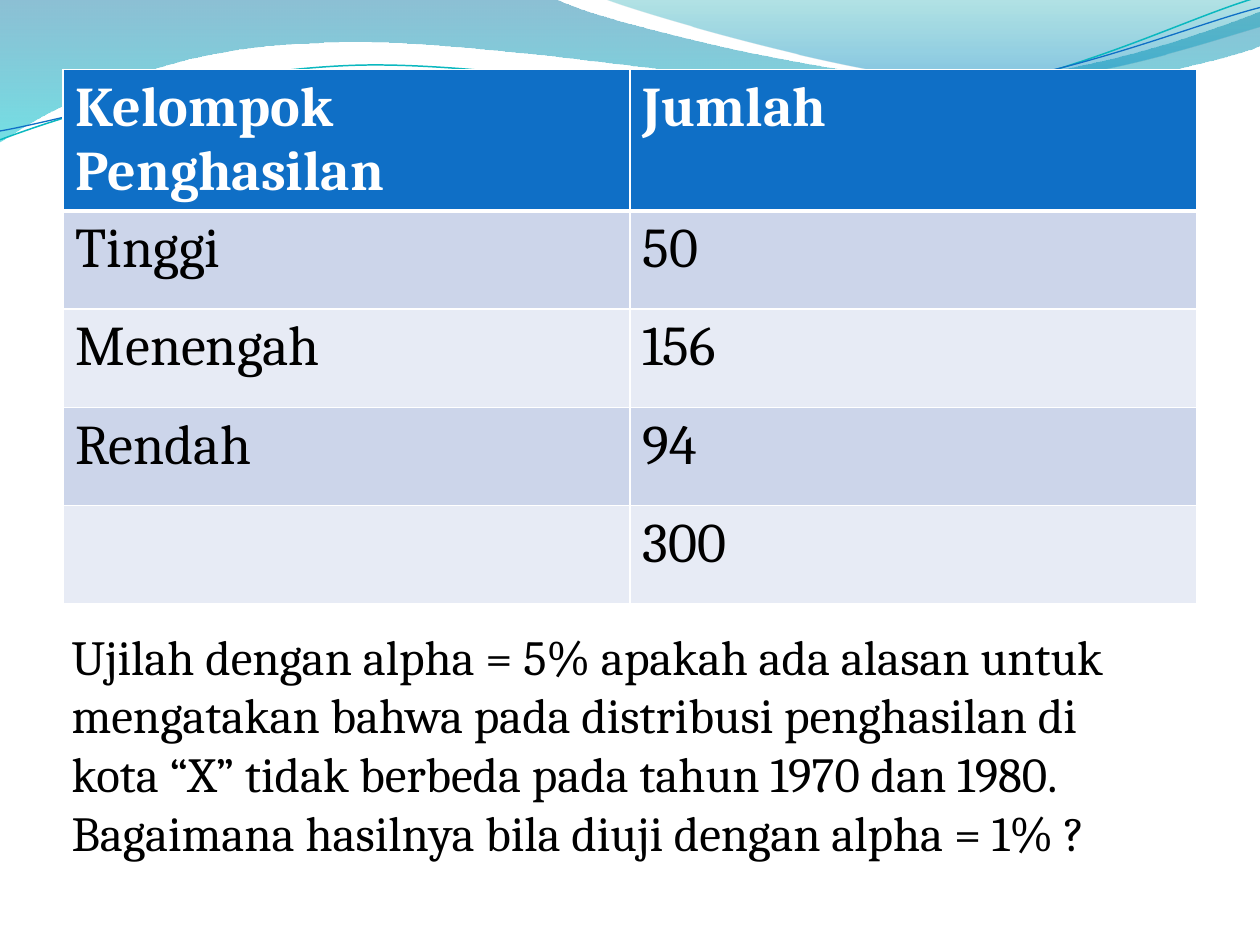
from math import cos, radians, sin

from lxml import etree
from pptx import Presentation
from pptx.dml.color import RGBColor
from pptx.enum.text import MSO_AUTO_SIZE
from pptx.oxml.ns import qn
from pptx.util import Inches, Pt

WHITE = RGBColor(0xFF, 0xFF, 0xFF)
BLACK = RGBColor(0, 0, 0)
BLUE = RGBColor(0x0F, 0x6F, 0xC6)
TEAL = RGBColor(0x0A, 0xB8, 0xBF)
BANDS = RGBColor(0xCC, 0xD5, 0xEA), RGBColor(0xE7, 0xEB, 0xF5)
FIT = MSO_AUTO_SIZE.SHAPE_TO_FIT_TEXT
FONT = "Cambria"
TILT = 2.7

BROAD = [
    [(0, 0)], [(4.4, -0.01)],
    [(4.76, 0.17), (6.64, 0.63), (7.58, 0.63)],
    [(8.53, 0.63), (9.58, 0.26), (10, 0.09)],
    [(10.01, 0.36)],
    [(9.83, 0.44), (8.7, 0.76), (7.46, 0.75)],
    [(6.22, 0.75), (3.82, 0.28), (2.57, 0.34)],
    [(1.29, 0.36), (0.46, 0.83), (-0.01, 1.13)],
    [(0, 0)],
]
CREST = [
    [(4.79, -0.01)],
    [(5.09, 0.11), (6.82, 0.62), (7.69, 0.65)],
    [(8.56, 0.69), (9.61, 0.32), (10, 0.21)],
    [(10, 0)], [(4.79, -0.01)],
]
UPPER = [
    [(0, 1.11)],
    [(0.48, 0.93), (1.58, 0.57), (2.77, 0.52)],
    [(3.95, 0.47), (5.93, 0.89), (7.13, 0.8)],
    [(8.33, 0.71), (9.38, 0.15), (9.98, -0.02)],
]
LOWER = [
    [(0, 1.04)],
    [(0.47, 0.96), (1.64, 0.61), (2.83, 0.56)],
    [(4.03, 0.51), (5.97, 0.84), (7.17, 0.75)],
    [(8.36, 0.67), (9.41, 0.21), (10, 0.06)],
]
ROWS = [
    ("Kelompok Penghasilan", "Jumlah"),
    ("Tinggi", "50"),
    ("Menengah", "156"),
    ("Rendah", "94"),
    ("", "300"),
]
TASK = [
    "Ujilah dengan alpha = 5% apakah ada alasan untuk mengatakan bahwa pada "
    "distribusi penghasilan di kota “X” tidak berbeda pada tahun 1970 dan 1980.",
    "Bagaimana hasilnya bila diuji dengan alpha = 1% ?",
]


def turn(path, mid):
    """Turn a path clockwise by the tilt about a middle point."""
    c, s = cos(radians(TILT)), sin(radians(TILT))
    cx, cy = mid
    return [
        [(cx + (x - cx) * c - (y - cy) * s, cy + (x - cx) * s + (y - cy) * c) for x, y in part]
        for part in path
    ]


class Deck:
    """Hold the style and the current slide."""

    def __init__(self, slide):
        self.slide = slide

    def outline(self, path, close):
        """Add an outline of lines and cubic curves."""
        ends = [(Inches(x), Inches(y)) for x, y in (part[-1] for part in path)]
        pen = self.slide.shapes.build_freeform(*ends[0])
        pen.add_line_segments(ends[1:], close=close)
        shape = pen.convert_to_shape()
        shape.shadow.inherit = False
        lines = list(shape.element.spPr.iter(qn("a:lnTo")))
        for line, part in zip(lines, path[1:]):
            if len(part) == 3:
                bend = etree.Element(qn("a:cubicBezTo"))
                for x, y in part:
                    left, top = Inches(x) - shape.left, Inches(y) - shape.top
                    etree.SubElement(bend, qn("a:pt"), x=str(left), y=str(top))
                line.getparent().replace(line, bend)
        return shape

    def wave(self, path, stops):
        """Add a wave with a see-through gradient running down."""
        shape = self.outline(path, True)
        shape.line.fill.background()
        shape.fill.gradient()
        shape.fill.gradient_angle = 270
        for stop, (place, color, _) in zip(shape.fill.gradient_stops, stops):
            stop.position = place
            stop.color.rgb = RGBColor.from_string(color)
        for node, (_, _, alpha) in zip(shape.element.spPr.iter(qn("a:srgbClr")), stops):
            etree.SubElement(node, qn("a:alpha"), val=str(alpha * 1000))

    def curve(self, path, mid, color, width):
        """Add a thin tilted curve."""
        shape = self.outline(turn(path, mid), False)
        shape.rotation = 360 - TILT
        shape.fill.background()
        shape.line.color.rgb = color
        shape.line.width = Pt(width)

    def style(self, frame, size, color, bold=False):
        """Format every run of a text frame."""
        for para in frame.paragraphs:
            for run in para.runs:
                font = run.font
                font.name, font.size, font.bold = FONT, Pt(size), bold
                font.color.rgb = color

    def border(self, cell, widths):
        """Draw white borders of the given widths on a cell."""
        props = cell._tc.get_or_add_tcPr()
        for i, (side, width) in enumerate(zip("LRTB", widths)):
            line = etree.Element(qn(f"a:ln{side}"), w=str(Pt(width)))
            fill = etree.SubElement(line, qn("a:solidFill"))
            etree.SubElement(fill, qn("a:srgbClr"), val=str(WHITE))
            props.insert(i, line)

    def table(self, rows, left, top, width, height, high):
        """Add a banded table with a header row."""
        frame = self.slide.shapes.add_table(
            len(rows), len(rows[0]), Inches(left), Inches(top), Inches(width), Inches(height)
        )
        grid = frame.table
        for r, row in enumerate(rows):
            grid.rows[r].height = Inches(high)
            for c, text in enumerate(row):
                cell = grid.cell(r, c)
                cell.text_frame.text = text
                self.style(cell.text_frame, 32, BLACK if r else WHITE, r == 0)
                cell.fill.solid()
                cell.fill.fore_color.rgb = BANDS[(r - 1) % 2] if r else BLUE
                self.border(cell, (1, 1, 3 if r == 1 else 1, 1 if r else 3))
        frame.height = Inches(height)

    def text(self, lines, left, top, width, height):
        """Add a wrapped text box that fits its text."""
        frame = self.slide.shapes.add_textbox(
            Inches(left), Inches(top), Inches(width), Inches(height)
        ).text_frame
        frame.word_wrap = True
        frame.auto_size = FIT
        frame.text = "\n".join(lines)
        self.style(frame, 28, BLACK)


def main():
    """Build and save the slide."""
    show = Presentation()
    show.slide_width, show.slide_height = Inches(10), Inches(7.5)
    deck = Deck(show.slides.add_slide(show.slide_layouts[6]))
    deck.wave(BROAD, [(0, "0074A1", 45), (1, "00C6CF", 55)])
    deck.wave(CREST, [(0, "00A1A9", 30), (0.8, "008BBF", 45)])
    deck.curve(UPPER, (4.99, 0.57), TEAL, 0.85)
    deck.curve(LOWER, (5, 0.59), BLUE, 0.75)
    deck.table(ROWS, 0.5, 0.55, 9, 4.29, 0.78)
    deck.text(TASK, 0.47, 4.92, 8.91, 1.99)
    show.save("out.pptx")


if __name__ == "__main__":
    main()
